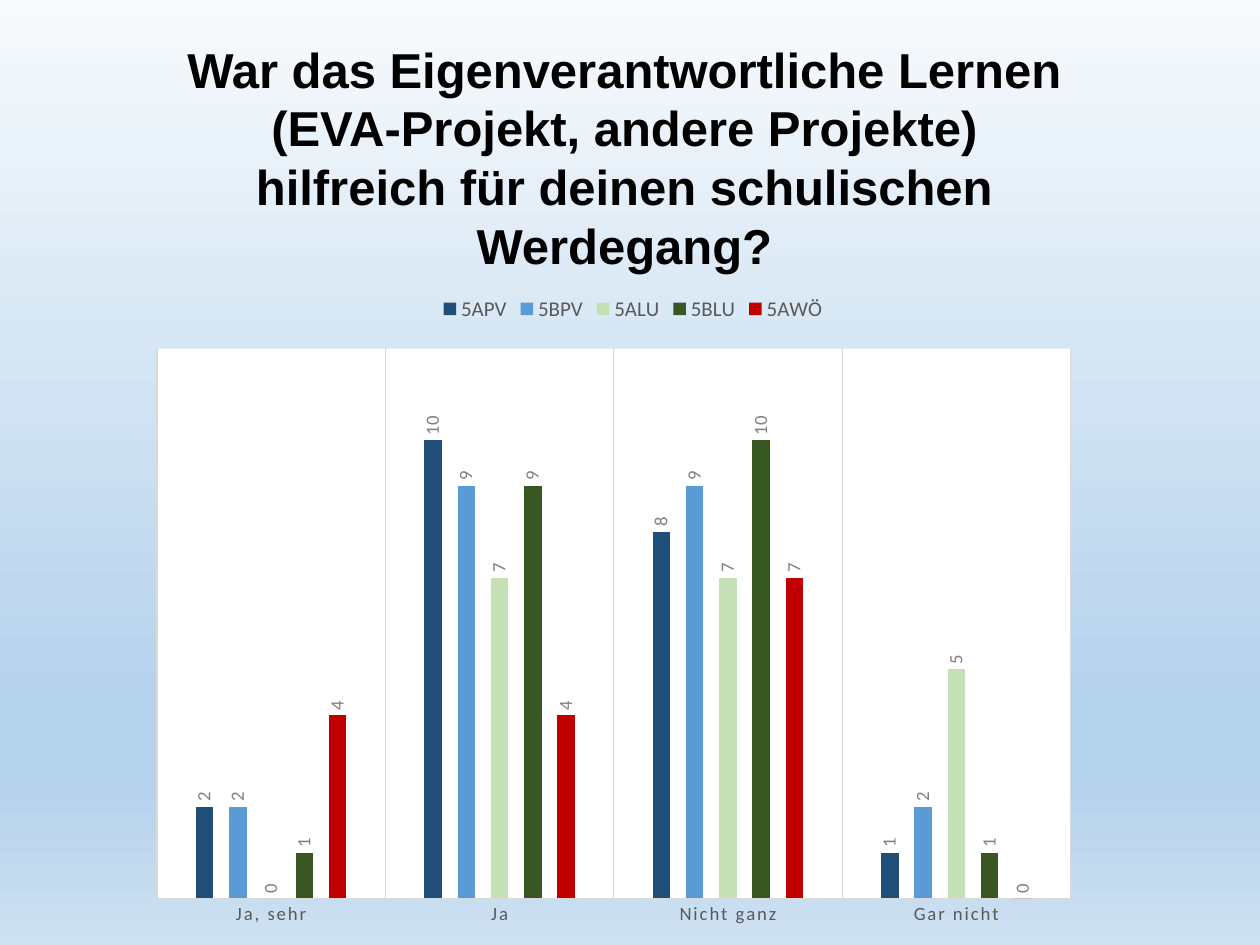
import pptx
import pptx.chart.data
import pptx.dml.color
import pptx.enum.chart
import pptx.enum.text
import pptx.oxml
import pptx.oxml.ns
import pptx.util
from pptx.util import Inches

QUESTION = (
    "War das Eigenverantwortliche Lernen (EVA-Projekt, andere Projekte) "
    "hilfreich für deinen schulischen Werdegang?"
)
ANSWERS = ["Ja, sehr", "Ja", "Nicht ganz", "Gar nicht"]
CLASSES = [
    ("5APV", (2, 10, 8, 1), "1F4E79"),
    ("5BPV", (2, 9, 9, 2), "5B9BD5"),
    ("5ALU", (0, 7, 7, 5), "C5E0B4"),
    ("5BLU", (1, 9, 10, 1), "385723"),
    ("5AWÖ", (4, 4, 7, 0), "C00000"),
]
THEME = {
    "heading_font": "Arial",
    "chart_font": "Calibri",
    "heading": "000000",
    "axis_text": "595959",
    "label_text": "808080",
    "grid": "D9D9D9",
    "plot": "FFFFFF",
    "heading_size": 28,
    "legend_size": 12,
    "label_size": 10.64,
    "background": [(0, "F7FAFD"), (74, "B5D2EC"), (83, "B5D2EC"), (100, "CEE1F2")],
}
PLOT_FRAME = {"x": 0, "y": 0.1, "w": 0.96, "h": 0.83}


def rgb(name):
    return pptx.dml.color.RGBColor.from_string(THEME.get(name, name))


def style_font(font, face, size, color):
    font.name = THEME[face]
    font.size = pptx.util.Pt(THEME[size])
    font.color.rgb = rgb(color)


def style_line(line):
    line.color.rgb = rgb("grid")
    line.width = pptx.util.Pt(0.75)


def xml(tag, content):
    namespaces = pptx.oxml.ns.nsdecls("a", "c")
    return pptx.oxml.parse_xml(f"<{tag} {namespaces}>{content}</{tag}>")


def paint_background(slide):
    fill = slide.background.fill
    fill.gradient()
    fill.gradient_angle = 270
    stops = "".join(
        f'<a:gs pos="{position * 1000}"><a:srgbClr val="{color}"/></a:gs>'
        for position, color in THEME["background"]
    )
    old_stops = slide.background._cSld.xpath(".//a:gsLst")[0]
    old_stops.getparent().replace(old_stops, xml("a:gsLst", stops))


def add_question(slide):
    title = slide.shapes.title
    title.left, title.top = Inches(1.25), Inches(0.26)
    title.width, title.height = Inches(7.41), Inches(1.99)
    frame = title.text_frame
    frame.word_wrap = True
    frame.auto_size = pptx.enum.text.MSO_AUTO_SIZE.NONE
    frame.vertical_anchor = pptx.enum.text.MSO_ANCHOR.TOP
    frame.text = QUESTION
    paragraph = frame.paragraphs[0]
    paragraph.alignment = pptx.enum.text.PP_ALIGN.CENTER
    paragraph.font.bold = True
    style_font(paragraph.font, "heading_font", "heading_size", "heading")


def frame_plot(chart):
    plot_area = chart._chartSpace.chart.plotArea
    for layout in plot_area.xpath("c:layout"):
        plot_area.remove(layout)
    sides = "".join(f'<c:{side} val="{share}"/>' for side, share in PLOT_FRAME.items())
    plot_area.insert(0, xml(
        "c:layout",
        '<c:manualLayout><c:layoutTarget val="inner"/>'
        '<c:xMode val="edge"/><c:yMode val="edge"/>'
        f"{sides}</c:manualLayout>",
    ))
    plot_area.append(xml(
        "c:spPr",
        f'<a:solidFill><a:srgbClr val="{THEME["plot"]}"/></a:solidFill>'
        "<a:ln><a:noFill/></a:ln>",
    ))


def add_answers_chart(slide):
    answers = pptx.chart.data.CategoryChartData()
    answers.categories = ANSWERS
    for name, votes, _ in CLASSES:
        answers.add_series(name, votes)
    chart = slide.shapes.add_chart(
        pptx.enum.chart.XL_CHART_TYPE.COLUMN_CLUSTERED,
        Inches(1.24), Inches(2.24), Inches(7.56), Inches(5.26), answers,
    ).chart
    chart.has_title = False
    style_font(chart.font, "chart_font", "label_size", "axis_text")

    chart.has_legend = True
    chart.legend.position = pptx.enum.chart.XL_LEGEND_POSITION.TOP
    chart.legend.include_in_layout = False
    style_font(chart.legend.font, "chart_font", "legend_size", "axis_text")

    answer_axis = chart.category_axis
    answer_axis.major_tick_mark = pptx.enum.chart.XL_TICK_MARK.NONE
    answer_axis.has_major_gridlines = True
    style_line(answer_axis.major_gridlines.format.line)
    style_line(answer_axis.format.line)
    style_font(answer_axis.tick_labels.font, "chart_font", "label_size", "axis_text")
    answer_axis._element.xpath("c:txPr//a:defRPr")[0].set("spc", "120")

    vote_axis = chart.value_axis
    vote_axis.minimum_scale, vote_axis.maximum_scale = 0, 12
    vote_axis.has_major_gridlines = False
    vote_axis.visible = False

    columns = chart.plots[0]
    columns.gap_width = 444
    columns.overlap = -90
    columns.vary_by_categories = False
    for series, (_, _, color) in zip(columns.series, CLASSES):
        series.format.fill.solid()
        series.format.fill.fore_color.rgb = rgb(color)
        series.invert_if_negative = False
        labels = series.data_labels
        labels.show_value = True
        labels.position = pptx.enum.chart.XL_LABEL_POSITION.OUTSIDE_END
        style_font(labels.font, "chart_font", "label_size", "label_text")
        text_body = labels._element.xpath("c:txPr/a:bodyPr")[0]
        text_body.set("rot", "-5400000")
        text_body.set("vert", "horz")
    frame_plot(chart)


def main():
    deck = pptx.Presentation()
    deck.slide_width, deck.slide_height = Inches(10), Inches(7.5)
    slide = deck.slides.add_slide(deck.slide_layouts[5])
    paint_background(slide)
    add_question(slide)
    add_answers_chart(slide)
    deck.save("out.pptx")


if __name__ == "__main__":
    main()
